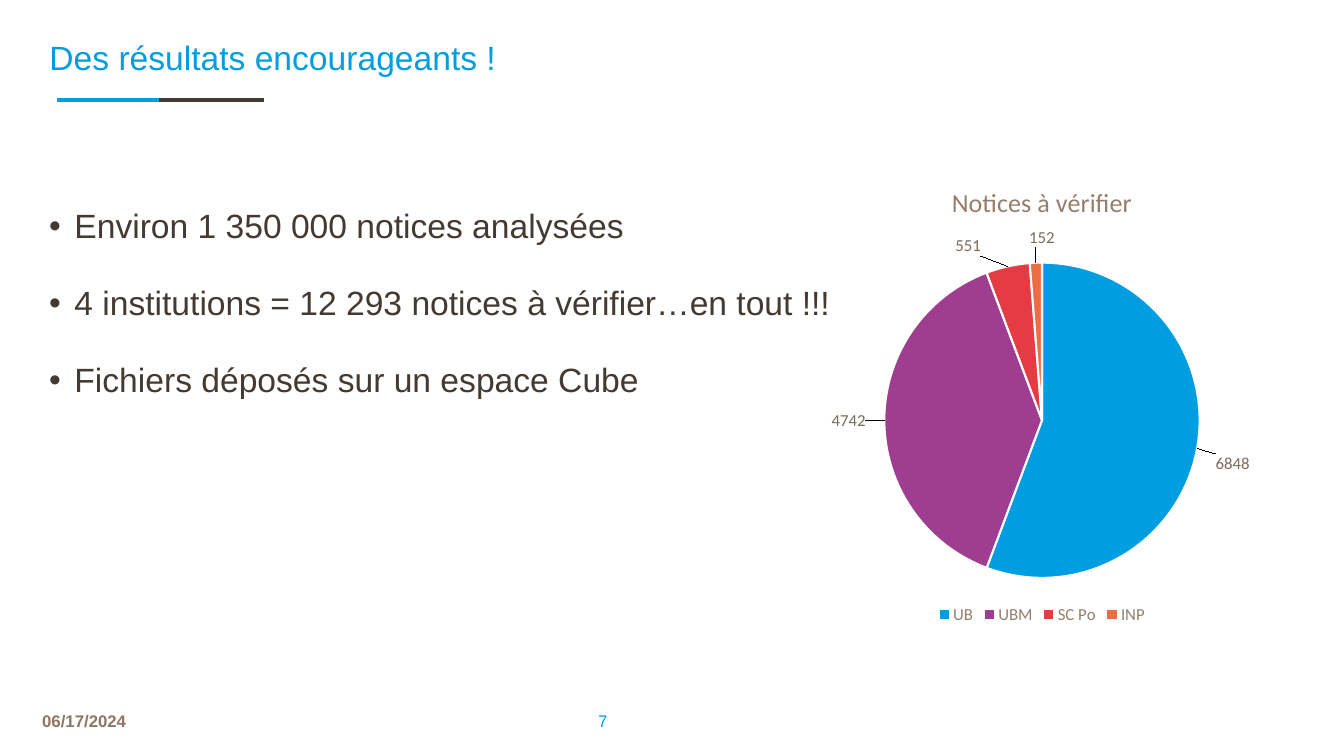
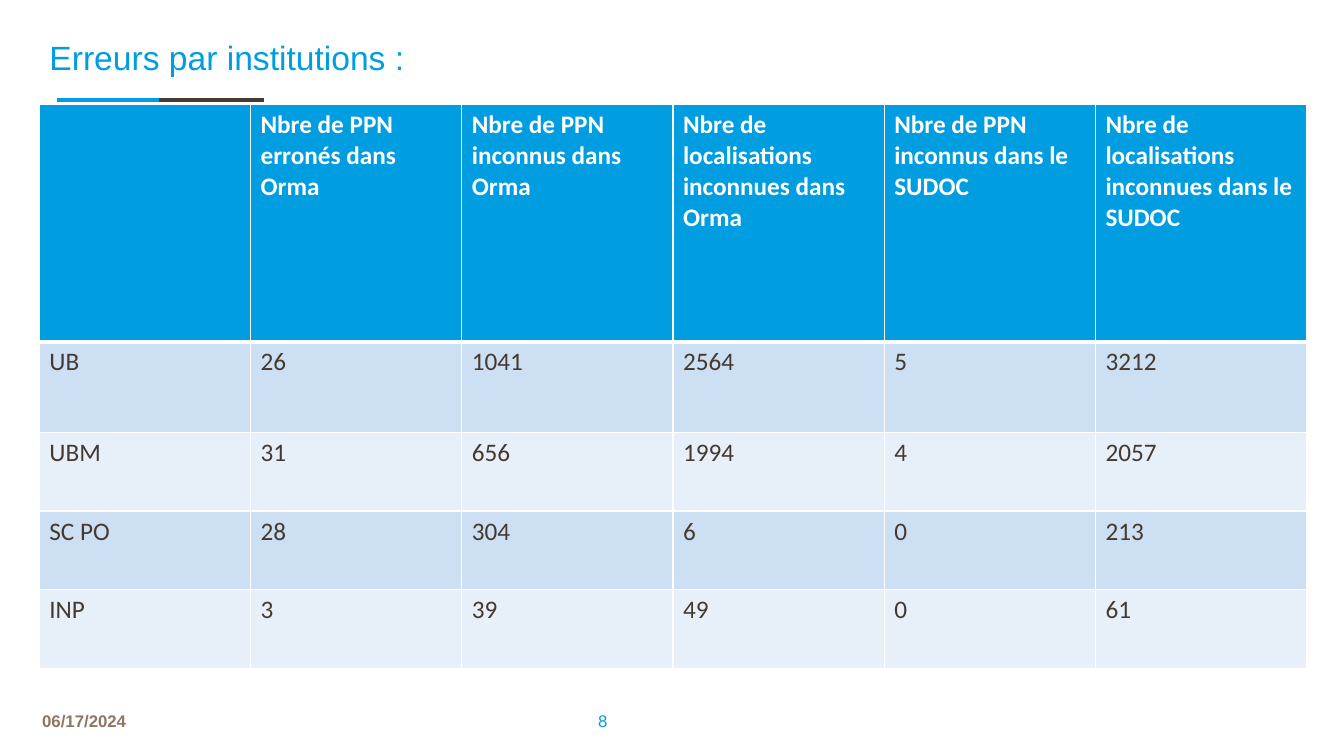
from lxml import etree
from pptx import Presentation
from pptx.chart.data import CategoryChartData
from pptx.dml.color import RGBColor
from pptx.enum.chart import XL_CHART_TYPE, XL_LABEL_POSITION, XL_LEGEND_POSITION
from pptx.enum.shapes import MSO_CONNECTOR
from pptx.enum.text import MSO_ANCHOR, PP_ALIGN
from pptx.oxml.ns import qn
from pptx.util import Inches, Pt

PIE = XL_CHART_TYPE.PIE
OUTSIDE_END = XL_LABEL_POSITION.OUTSIDE_END
LEGEND_BOTTOM = XL_LEGEND_POSITION.BOTTOM
STRAIGHT = MSO_CONNECTOR.STRAIGHT
MIDDLE = MSO_ANCHOR.MIDDLE
LEFT, CENTER = PP_ALIGN.LEFT, PP_ALIGN.CENTER

COLORS = {
    "blue": "009DE0", "brown": "453A31", "text": "443A31", "date": "907662",
    "legend": "947E6B", "label": "7D6B5A", "white": "FFFFFF",
    "purple": "9F3E91", "red": "E53C43", "orange": "EC6C43",
    "band_dark": "CCDFF3", "band_light": "E7EFF9",
}
FONTS = {
    "title": {"name": "Arial", "size": Pt(24), "bold": False, "color": "blue"},
    "bullet": {"name": "Arial", "size": Pt(24), "color": "text"},
    "date": {"name": "Arial", "size": Pt(12), "bold": True, "color": "date"},
    "number": {"name": "Arial", "size": Pt(12), "color": "blue"},
    "chart_title": {"name": "Calibri", "size": Pt(18.6), "bold": False, "color": "legend"},
    "legend": {"name": "Calibri", "size": Pt(12), "color": "legend"},
    "label": {"name": "Calibri", "size": Pt(12), "color": "label"},
    "header": {"name": "Calibri", "size": Pt(18), "bold": True, "color": "white"},
    "cell": {"name": "Calibri", "size": Pt(18), "bold": False, "color": "text"},
}

TITLE_BOX = (0.39, 0.27, 11.5, 0.64)
DATE_BOX = (0.32, 6.95, 1.46, 0.4)
NUMBER_BOX = (5.68, 6.95, 0.6, 0.4)
RULES = (("blue", 0.57, 1.61), ("brown", 1.58, 2.62))
RULE_TOP = 0.99
DATE = "06/17/2024"

BULLETS = (
    "Environ 1 350 000 notices analysées",
    "4 institutions = 12 293 notices à vérifier…en tout !!!",
    "Fichiers déposés sur un espace Cube",
)
# institution, records, slice colour, label shift as a share of the chart
RECORDS = (
    ("UB", 6848, "blue", (0.02, 0.01)),
    ("UBM", 4742, "purple", (-0.02, 0)),
    ("SC Po", 551, "red", (-0.04, -0.01)),
    ("INP", 152, "orange", (0.01, -0.02)),
)
PIE_AREA = {"x": 0.25, "y": 0.21, "w": 0.5, "h": 0.68}

ERRORS = (
    ("", "Nbre de PPN erronés dans Orma", "Nbre de PPN inconnus dans Orma",
     "Nbre de localisations inconnues dans Orma", "Nbre de PPN inconnus dans le SUDOC",
     "Nbre de localisations inconnues dans le SUDOC"),
    ("UB", 26, 1041, 2564, 5, 3212),
    ("UBM", 31, 656, 1994, 4, 2057),
    ("SC PO", 28, 304, 6, 0, 213),
    ("INP", 3, 39, 49, 0, 61),
)
ROW_HEIGHTS = (2.35, 0.9, 0.78, 0.78, 0.78)


def rgb(color):
    return RGBColor.from_string(COLORS[color])


def inches(box):
    return [Inches(length) for length in box]


def style(font, role):
    for key, value in FONTS[role].items():
        if key == "color":
            font.color.rgb = rgb(value)
        else:
            setattr(font, key, value)


def fill_solid(fill, color):
    fill.solid()
    fill.fore_color.rgb = rgb(color)


def add_child(parent, tag, **attributes):
    return etree.SubElement(parent, qn(tag), attributes)


def add_text(slide, box, text, role, align):
    frame = slide.shapes.add_textbox(*inches(box)).text_frame
    frame.word_wrap = True
    frame.vertical_anchor = MIDDLE
    paragraph = frame.paragraphs[0]
    paragraph.text = text
    paragraph.alignment = align
    style(paragraph.font, role)


def add_rule(slide, color, left, right):
    rule = slide.shapes.add_connector(
        STRAIGHT, *inches((left, RULE_TOP, right, RULE_TOP)))
    rule.line.width = Pt(3)
    rule.line.color.rgb = rgb(color)
    add_child(rule.line._get_or_add_ln().getparent(), "a:effectLst")


def add_base_slide(prs, title, number):
    """Add a slide with its title, two-colour rule, date and number."""
    slide = prs.slides.add_slide(prs.slide_layouts[5])
    heading = slide.shapes.title
    heading.left, heading.top, heading.width, heading.height = inches(TITLE_BOX)
    frame = heading.text_frame
    frame.text = title
    frame.vertical_anchor = MIDDLE
    paragraph = frame.paragraphs[0]
    paragraph.alignment = LEFT
    paragraph.line_spacing = 0.9
    style(paragraph.font, "title")
    for rule in RULES:
        add_rule(slide, *rule)
    add_text(slide, DATE_BOX, DATE, "date", LEFT)
    add_text(slide, NUMBER_BOX, str(number), "number", CENTER)
    return slide


def add_bullets(slide, box):
    frame = slide.shapes.add_textbox(*inches(box)).text_frame
    frame.word_wrap = True
    for index, text in enumerate(BULLETS):
        paragraph = frame.add_paragraph() if index else frame.paragraphs[0]
        paragraph.text = text
        paragraph.line_spacing = 0.9
        paragraph.space_before = Pt(29 if index else 0)
        properties = paragraph._p.get_or_add_pPr()
        properties.set("marL", str(Inches(0.25)))
        properties.set("indent", str(-Inches(0.25)))
        add_child(properties, "a:buFont", typeface="Arial")
        add_child(properties, "a:buChar", char="•")
        style(paragraph.font, "bullet")


def manual_layout(parent, position, values):
    """Insert a c:layout holding the given values as child number position."""
    layout = etree.Element(qn("c:layout"))
    manual = add_child(layout, "c:manualLayout")
    for key, value in values.items():
        add_child(manual, f"c:{key}", val=str(value))
    parent.insert(position, layout)


def style_slice(point, color, shift):
    fill_solid(point.format.fill, color)
    point.format.line.color.rgb = rgb("white")
    point.format.line.width = Pt(1.5)
    label = point.data_label
    style(label.font, "label")
    label.position = OUTSIDE_END
    manual_layout(label._get_or_add_dLbl(), 1, dict(zip("xy", shift)))


def add_records_pie(slide, box):
    data = CategoryChartData()
    data.categories = [record[0] for record in RECORDS]
    data.add_series("Notices à vérifier", [record[1] for record in RECORDS])
    chart = slide.shapes.add_chart(PIE, *inches(box), data).chart
    style(chart.font, "label")

    chart.has_title = True
    chart.chart_title.text_frame.text = "Notices à vérifier"
    style(chart.chart_title.text_frame.paragraphs[0].runs[0].font, "chart_title")
    chart.has_legend = True
    chart.legend.position = LEGEND_BOTTOM
    chart.legend.include_in_layout = False
    style(chart.legend.font, "legend")

    plot = chart.plots[0]
    plot.vary_by_categories = True
    series = plot.series[0]
    series.data_labels.show_value = True
    series.data_labels.position = OUTSIDE_END
    style(series.data_labels.font, "label")
    for index, (_, _, color, shift) in enumerate(RECORDS):
        style_slice(series.points[index], color, shift)

    plot_area = chart._chartSpace.chart.plotArea
    for layout in plot_area.findall(qn("c:layout")):
        plot_area.remove(layout)
    manual_layout(plot_area, 0, {
        "layoutTarget": "inner", "xMode": "edge", "yMode": "edge", **PIE_AREA})


def set_borders(cell, widths):
    """Draw white borders; they must come before the fill in the cell."""
    properties = cell._tc.get_or_add_tcPr()
    for side, width in widths.items():
        line = add_child(properties, f"a:ln{side}", w=str(Pt(width)))
        solid = add_child(line, "a:solidFill")
        add_child(solid, "a:srgbClr", val=COLORS["white"])


def add_errors_table(slide, box):
    left, top, width = box
    column_count = len(ERRORS[0])
    table = slide.shapes.add_table(
        len(ERRORS), column_count,
        *inches((left, top, width, sum(ROW_HEIGHTS)))).table
    for column in table.columns:
        column.width = Inches(width / column_count)
    for row_index, values in enumerate(ERRORS):
        table.rows[row_index].height = Inches(ROW_HEIGHTS[row_index])
        is_header = row_index == 0
        band = "band_dark" if row_index % 2 else "band_light"
        widths = {"L": 1, "R": 1, "T": 3 if row_index == 1 else 1,
                  "B": 3 if is_header else 1}
        for column_index, value in enumerate(values):
            cell = table.cell(row_index, column_index)
            cell.text = str(value)
            style(cell.text_frame.paragraphs[0].font, "header" if is_header else "cell")
            set_borders(cell, widths)
            fill_solid(cell.fill, "blue" if is_header else band)


def main():
    prs = Presentation()
    prs.slide_width, prs.slide_height = Inches(13.33), Inches(7.5)

    results = add_base_slide(prs, "Des résultats encourageants !", 7)
    add_bullets(results, (0.39, 2.03, 12.57, 4.35))
    add_records_pie(results, (7.17, 1.64, 6.33, 4.6))

    errors = add_base_slide(prs, "Erreurs par institutions :", 8)
    add_errors_table(errors, (0.39, 1.04, 12.57))

    prs.save("out.pptx")


if __name__ == "__main__":
    main()
